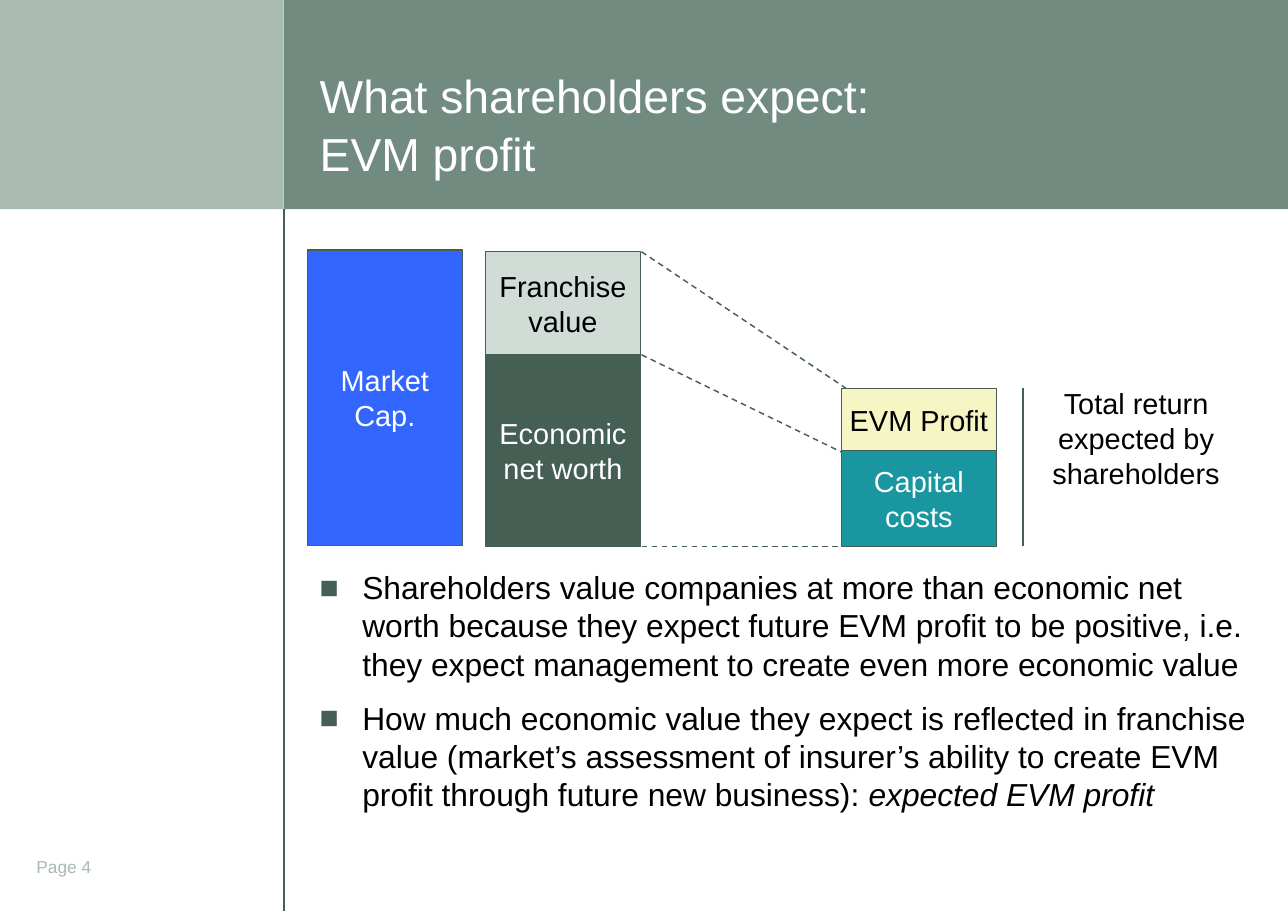
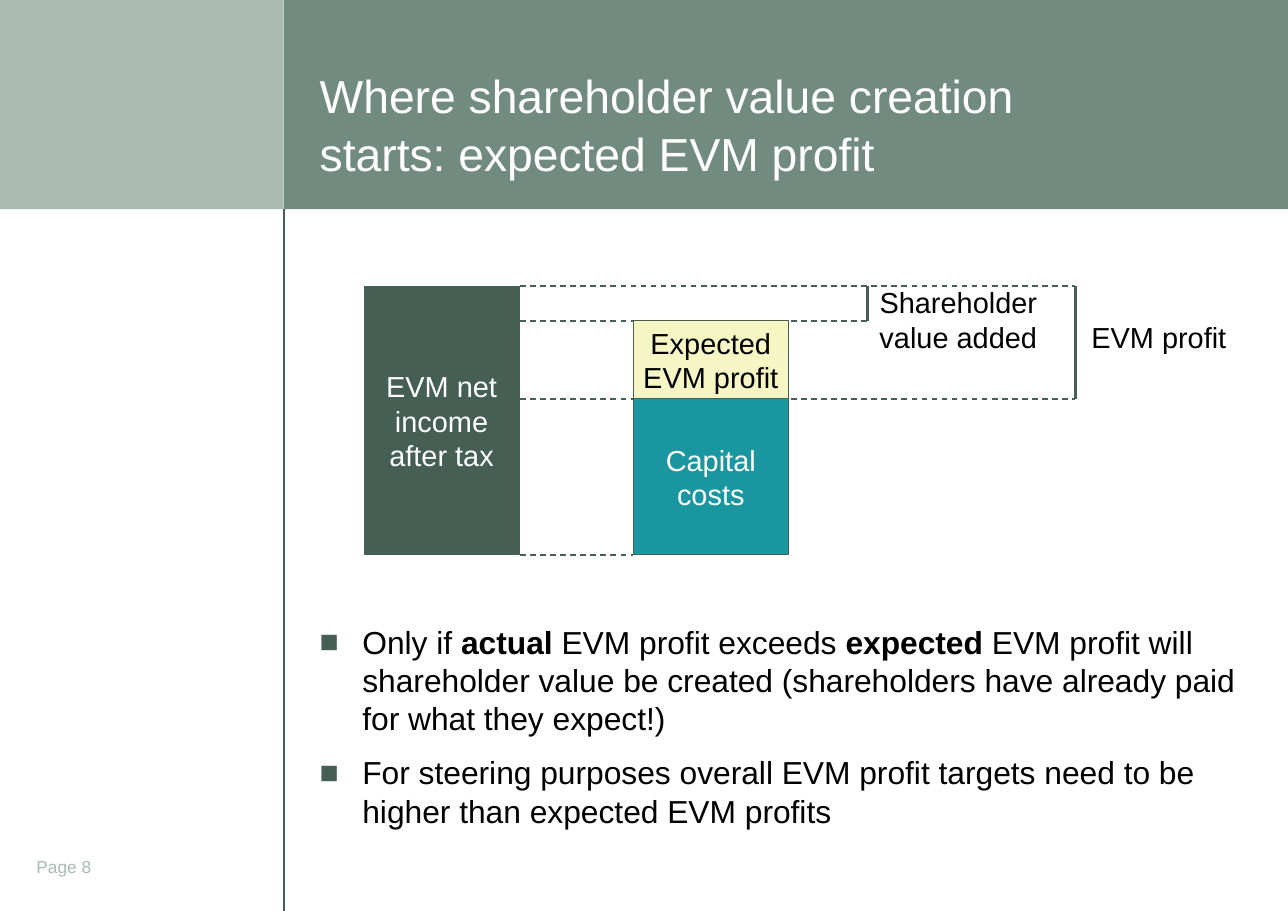
"""Build two slides on shareholder value and EVM profit."""
from lxml.etree import SubElement
from pptx import Presentation
from pptx.dml.color import RGBColor
from pptx.enum.dml import MSO_LINE
from pptx.enum.shapes import MSO_CONNECTOR, MSO_SHAPE
from pptx.enum.text import MSO_ANCHOR, PP_ALIGN
from pptx.oxml.ns import qn
from pptx.util import Pt

WIDE, HIGH, SIDE, HEAD, BAR = 891.4, 630.35, 196.2, 144.8, 107.3
DARK, MID, PALE, MIST = "455F55", "728B81", "A8BAB2", "D1DCD6"
TEAL, CREAM, BLUE, WHITE, BLACK = "1996A0", "F6F6C5", "3366FF", "FFFFFF", "000000"
LEFT, MIDDLE = PP_ALIGN.LEFT, PP_ALIGN.CENTER
TOP, BASE = MSO_ANCHOR.TOP, MSO_ANCHOR.BOTTOM


def ink(part, tone):
    """Give a font, line or fill its solid colour."""
    if hasattr(part, "solid"):
        part.solid()
        part.fore_color.rgb = RGBColor.from_string(tone)
    else:
        part.color.rgb = RGBColor.from_string(tone)


def write(frame, text, size, tone, align=LEFT, anchor=TOP, pad=(5, 5), space=None, mark="bold"):
    """Fill a frame; newlines part paragraphs and stars enclose marked runs."""
    form = {
        "word_wrap": True, "vertical_anchor": anchor,
        "margin_left": Pt(pad[0]), "margin_right": Pt(pad[0]),
        "margin_top": Pt(pad[1]), "margin_bottom": Pt(pad[1]),
    }
    for key, val in form.items():
        setattr(frame, key, val)
    for row, line in enumerate(text.split("\n")):
        para = frame.add_paragraph() if row else frame.paragraphs[0]
        first, *rest = line.split("*")
        para.text = first
        start = len(para.runs)
        for chunk in rest:
            para.add_run().text = chunk
        para.alignment = align
        if space:
            para.line_spacing = space
        for spot, run in enumerate(para.runs):
            strong = spot >= start and (spot - start) % 2 == 0
            look = {"name": "Arial", "size": Pt(size), mark: strong}
            for key, val in look.items():
                setattr(run.font, key, val)
            ink(run.font, tone)


pages = [
    {
        "page": "Page 4",
        "title": "What shareholders expect:\vEVM profit",
        "top": 388,
        "mark": "italic",
        "body": "Shareholders value companies at more than economic net worth because they expect "
                "future EVM profit to be positive, i.e. they expect management to create even more "
                "economic value\n"
                "How much economic value they expect is reflected in franchise value (market’s "
                "assessment of insurer’s ability to create EVM profit through future new business): "
                "*expected EVM profit*",
        "dashes": [(444, 378, 582, 378), (444, 245.5, 583.2, 313.2), (444, 174.2, 585.4, 268.6)],
        "rules": [(708, 268.6, 708, 378)],
        "bars": [
            ("Market\nCap.", 212.7, 173, 377.5, BLUE, WHITE),
            ("Economic\nnet worth", 336, 245.7, 378, DARK, WHITE),
            ("Franchise value", 336, 174.2, 245.7, MIST, BLACK),
            ("EVM Profit", 582.3, 268.8, 312, CREAM, BLACK),
            ("Capital costs", 582.3, 312, 378, TEAL, WHITE),
        ],
        "notes": [("Total return expected by shareholders", 720.3, 262, 132, 82, MIDDLE)],
    },
    {
        "page": "Page 8",
        "title": "Where shareholder value creation starts: expected EVM profit",
        "top": 426,
        "mark": "bold",
        "body": "Only if *actual* EVM profit exceeds *expected* EVM profit will shareholder value be "
                "created (shareholders have already paid for what they expect!)\n"
                "For steering purposes overall EVM profit targets need to be higher than expected "
                "EVM profits",
        "dashes": [(360, 384, 438, 384), (360, 276, 744.3, 276),
                   (360, 198, 744.3, 198), (360, 222, 600.3, 222)],
        "rules": [(744.3, 198, 744.3, 276), (600.3, 198, 600.3, 222)],
        "bars": [
            ("EVM net income\nafter tax", 252, 198, 384, DARK, WHITE),
            ("Capital costs", 438.3, 276, 384, TEAL, WHITE),
            ("Expected EVM profit", 438.3, 222, 276, CREAM, BLACK),
        ],
        "notes": [
            ("EVM profit", 750.3, 216, 108, 34.6, LEFT),
            ("Shareholder value added", 594.3, 192, 138, 58, MIDDLE),
        ],
    },
]

deck = Presentation()
deck.slide_width, deck.slide_height = Pt(WIDE), Pt(HIGH)

for page in pages:
    slide = deck.slides.add_slide(deck.slide_layouts[6])
    shapes = slide.shapes
    ink(slide.background.fill, WHITE)

    for left, width, tone in [(SIDE, WIDE - SIDE, MID), (0, SIDE, PALE)]:
        band = shapes.add_shape(MSO_SHAPE.RECTANGLE, Pt(left), 0, Pt(width), Pt(HEAD))
        band.shadow.inherit = False
        ink(band.fill, tone)
        band.line.fill.background()

    strokes = [((196.5, HEAD, 196.5, HIGH), 1, None)]
    strokes += [(ends, 1, MSO_LINE.DASH) for ends in page["dashes"]]
    strokes += [(ends, 2, None) for ends in page["rules"]]
    for ends, weight, dash in strokes:
        link = shapes.add_connector(MSO_CONNECTOR.STRAIGHT, *map(Pt, ends))
        SubElement(link._element.spPr, qn("a:effectLst"))
        ink(link.line, DARK)
        link.line.width = Pt(weight)
        if dash:
            link.line.dash_style = dash

    for text, left, top, foot, fill, tone in page["bars"]:
        bar = shapes.add_shape(MSO_SHAPE.RECTANGLE, Pt(left), Pt(top), Pt(BAR), Pt(foot - top))
        bar.shadow.inherit = False
        ink(bar.fill, fill)
        ink(bar.line, DARK)
        bar.line.width = Pt(0.75)
        write(bar.text_frame, text, 20, tone, MIDDLE, MSO_ANCHOR.MIDDLE, (3.6, 9.4))

    for text, left, top, width, height, align in page["notes"]:
        note = shapes.add_textbox(Pt(left), Pt(top), Pt(width), Pt(height))
        write(note.text_frame, text, 20, BLACK, align)

    title = shapes.add_textbox(Pt(216.3), Pt(52), Pt(504), Pt(78))
    write(title.text_frame, page["title"], 32, WHITE, anchor=BASE, space=1.05)
    foot = shapes.add_textbox(Pt(20.2), Pt(582), Pt(90), Pt(30))
    write(foot.text_frame, page["page"], 12, PALE, anchor=BASE)

    body = shapes.add_textbox(Pt(216.3), Pt(page["top"]), Pt(654), Pt(184))
    write(body.text_frame, page["body"], 22, BLACK, mark=page["mark"])
    for row, para in enumerate(body.text_frame.paragraphs):
        para.space_before = Pt(11 if row else 0)
        props = para._p.get_or_add_pPr()
        props.set("marL", str(Pt(29.5)))
        props.set("indent", str(-Pt(29.5)))
        SubElement(SubElement(props, qn("a:buClr")), qn("a:srgbClr"), val=DARK)
        SubElement(props, qn("a:buFont"), typeface="Arial")
        SubElement(props, qn("a:buChar"), char="■")

deck.save("out.pptx")
